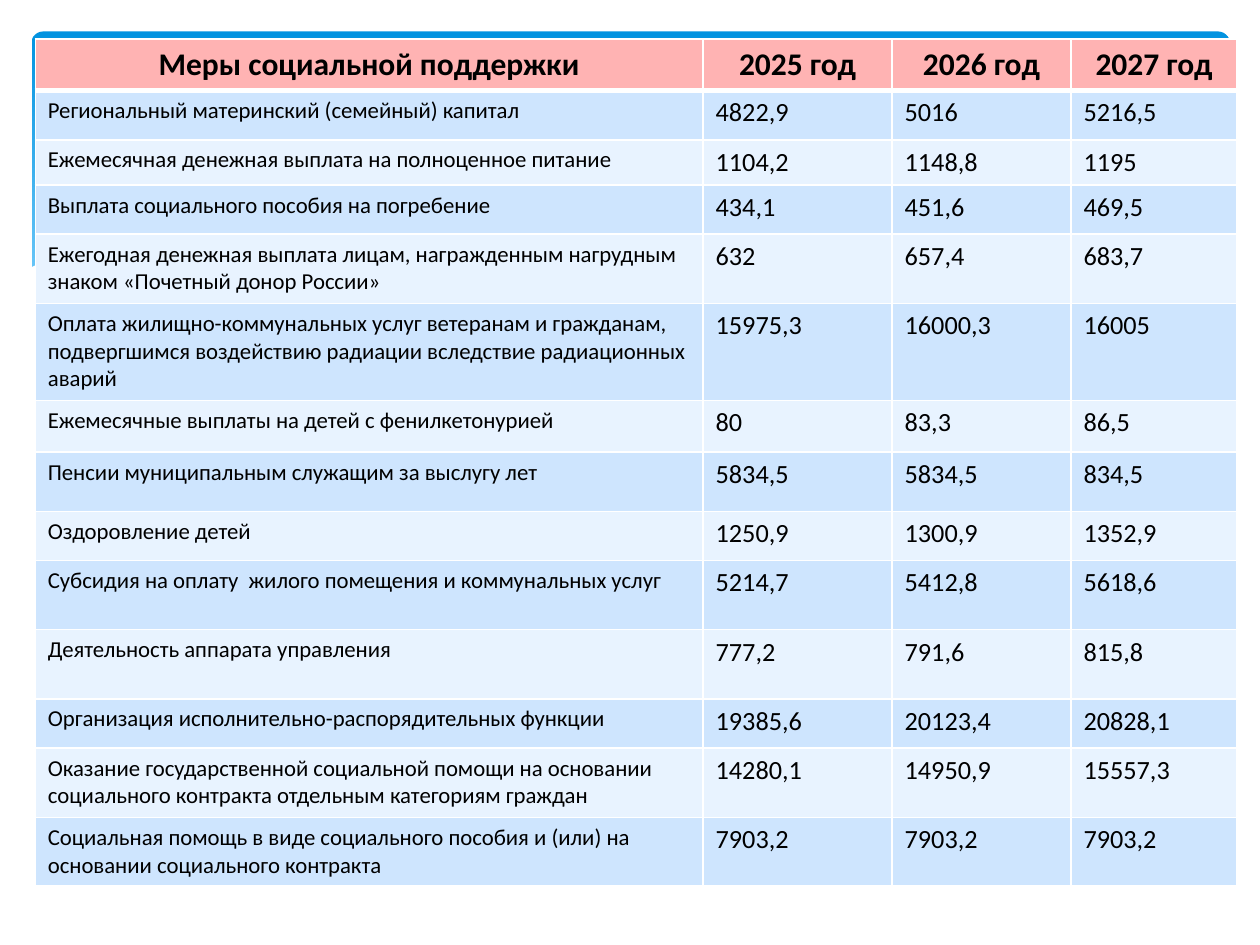
from lxml.etree import SubElement
from pptx import Presentation
from pptx.dml.color import RGBColor
from pptx.enum.shapes import MSO_SHAPE
from pptx.enum.text import PP_ALIGN
from pptx.oxml.ns import qn
from pptx.util import Inches, Pt

# Content: support measure, then one value per year
HEADER = ("Меры социальной поддержки", "2025 год", "2026 год", "2027 год")
MEASURES = [
    ("Региональный материнский (семейный) капитал", "4822,9", "5016", "5216,5"),
    ("Ежемесячная денежная выплата на полноценное питание", "1104,2", "1148,8", "1195"),
    ("Выплата социального пособия на погребение", "434,1", "451,6", "469,5"),
    ("Ежегодная денежная выплата лицам, награжденным нагрудным знаком "
     "«Почетный донор России»", "632", "657,4", "683,7"),
    ("Оплата жилищно-коммунальных услуг ветеранам и гражданам, подвергшимся "
     "воздействию радиации вследствие радиационных аварий", "15975,3", "16000,3", "16005"),
    ("Ежемесячные выплаты на детей с фенилкетонурией", "80", "83,3", "86,5"),
    ("Пенсии муниципальным служащим за выслугу лет", "5834,5", "5834,5", "834,5"),
    ("Оздоровление детей", "1250,9", "1300,9", "1352,9"),
    ("Субсидия на оплату  жилого помещения и коммунальных услуг",
     "5214,7", "5412,8", "5618,6"),
    ("Деятельность аппарата управления", "777,2", "791,6", "815,8"),
    ("Организация исполнительно-распорядительных функции",
     "19385,6", "20123,4", "20828,1"),
    ("Оказание государственной социальной помощи на основании социального "
     "контракта отдельным категориям граждан", "14280,1", "14950,9", "15557,3"),
    ("Социальная помощь в виде социального пособия и (или) на основании "
     "социального контракта", "7903,2", "7903,2", "7903,2"),
]
COLUMN_WIDTHS = (5.3, 1.5, 1.42, 1.32)
ROW_HEIGHTS = (0.41, 0.39, 0.36, 0.39, 0.55, 0.77, 0.41,
               0.47, 0.39, 0.55, 0.55, 0.39, 0.55, 0.53)
WAVE = [(9.77, 2.46), (9.3, 2.62), (8.75, 2.73), (8.09, 2.77), (7.26, 2.72),
        (6.48, 2.62), (5.55, 2.45), (4.47, 2.2), (3.65, 2.02), (2.92, 1.9),
        (2.3, 1.85), (1.77, 1.84), (1.19, 1.87), (0.76, 1.95), (0.4, 2.05),
        (0.23, 2.13), (0.23, 3.29), (9.77, 3.29)]

FONT = "Calibri"
BLACK = RGBColor(0x00, 0x00, 0x00)
WHITE = RGBColor(0xFF, 0xFF, 0xFF)
PINK = RGBColor(0xFF, 0xB3, 0xB3)
BANDS = (RGBColor(0xCE, 0xE5, 0xFE), RGBColor(0xE8, 0xF3, 0xFF))
PANEL_TOP = RGBColor(0x02, 0x93, 0xE0)
PANEL_BOTTOM = RGBColor(0x83, 0xD3, 0xFE)


def add_panel(page):
    panel = page.shapes.add_shape(MSO_SHAPE.ROUNDED_RECTANGLE, Inches(0.25),
                                  Inches(0.25), Inches(9.51), Inches(2.7))
    panel.adjustments[0] = 0.034
    panel.shadow.inherit = False
    panel.line.fill.background()
    panel.fill.gradient()
    panel.fill.gradient_angle = 270
    stops = zip(panel.fill.gradient_stops, (0, 0.9), (PANEL_TOP, PANEL_BOTTOM))
    for stop, position, color in stops:
        stop.position = position
        stop.color.rgb = color


def add_wave(page):
    points = [(Inches(x), Inches(y)) for x, y in WAVE]
    builder = page.shapes.build_freeform(*points[0])
    builder.add_line_segments(points[1:], close=True)
    wave = builder.convert_to_shape()
    wave.shadow.inherit = False
    wave.fill.solid()
    wave.fill.fore_color.rgb = WHITE
    wave.line.fill.background()


def set_borders(cell, bottom=1, top=1):
    properties = cell._tc.get_or_add_tcPr()
    for side, width in (("L", 1), ("R", 1), ("T", top), ("B", bottom)):
        line = SubElement(properties, qn(f"a:ln{side}"), w=str(Pt(width)))
        fill = SubElement(line, qn("a:solidFill"))
        SubElement(fill, qn("a:srgbClr"), val=str(WHITE))


def write(cell, text, size, bold=False, align=PP_ALIGN.LEFT):
    para = cell.text_frame.paragraphs[0]
    para.alignment = align
    span = para.add_run()
    span.text = text
    span.font.name = FONT
    span.font.size = Pt(size)
    span.font.bold = bold
    span.font.color.rgb = BLACK


def add_measures_table(page):
    rows = [HEADER, *MEASURES]
    table = page.shapes.add_table(
        len(rows), len(HEADER), Inches(0.28), Inches(0.31),
        Inches(sum(COLUMN_WIDTHS)), Inches(sum(ROW_HEIGHTS))).table
    for column, width in zip(table.columns, COLUMN_WIDTHS):
        column.width = Inches(width)
    for row, height in zip(table.rows, ROW_HEIGHTS):
        row.height = Inches(height)
    for i, values in enumerate(rows):
        for j, text in enumerate(values):
            cell = table.cell(i, j)
            set_borders(cell, bottom=3 if i == 0 else 1, top=3 if i == 1 else 1)
            cell.fill.solid()
            cell.fill.fore_color.rgb = PINK if i == 0 else BANDS[(i - 1) % 2]
            if i == 0:
                write(cell, text, 18, bold=True, align=PP_ALIGN.CENTER)
            else:
                write(cell, text, 13 if j == 0 else 15)


def main():
    deck = Presentation()
    deck.slide_width, deck.slide_height = Inches(10), Inches(7.5)
    page = deck.slides.add_slide(deck.slide_layouts[6])
    add_panel(page)
    add_wave(page)
    add_measures_table(page)
    deck.save("out.pptx")


if __name__ == "__main__":
    main()
